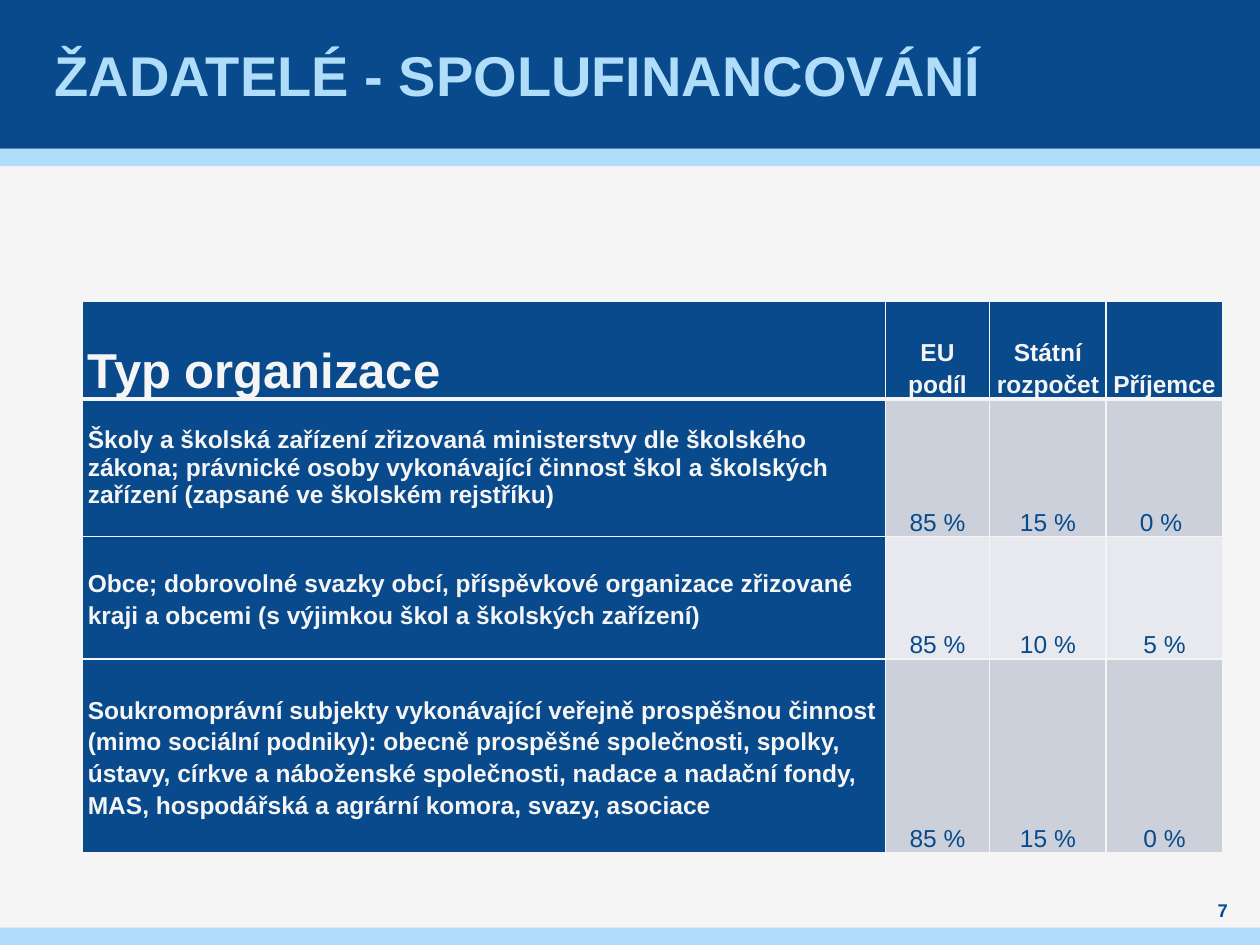
from dataclasses import dataclass

import lxml.etree
import pptx
import pptx.dml.color
import pptx.enum.shapes
import pptx.enum.text
import pptx.oxml.ns
import pptx.util

Cm = pptx.util.Cm
Pt = pptx.util.Pt
Align = pptx.enum.text.PP_ALIGN
Anchor = pptx.enum.text.MSO_ANCHOR

COLORS = {
    "navy": "084A8B",
    "sky": "AFDDFA",
    "paper": "F5F5F5",
    "band_dark": "CCD0DA",
    "band_light": "E7E9EE",
}
FONT = "Arial"
COLUMN_WIDTHS = (16.2, 2.1, 2.35, 2.35)
HEADER_HEIGHT = 1.96
HEADINGS = ("Typ organizace", "EU podíl", "Státní rozpočet ", "Příjemce")


@dataclass(frozen=True)
class Bar:
    top: float
    height: float
    color: str


@dataclass(frozen=True)
class TextStyle:
    size: float
    color: str
    bold: bool = True
    align: Align = Align.LEFT
    anchor: Anchor = Anchor.MIDDLE
    spacing: float = 1.0


@dataclass(frozen=True)
class Applicant:
    name: str
    shares: tuple[str, str, str]
    height: float
    band: str
    spacing: float = 1.15


BARS = (
    Bar(3.0, 0.35, "sky"),
    Bar(0, 3.0, "navy"),
    Bar(18.7, 0.35, "sky"),
)
APPLICANTS = (
    Applicant(
        "Školy a školská zařízení zřizovaná ministerstvy dle školského zákona; "
        "právnické osoby vykonávající činnost škol a školských zařízení "
        "(zapsané ve školském rejstříku)",
        ("85 %", "15 %", "0 % "), 2.78, "band_dark", 1.0,
    ),
    Applicant(
        "Obce; dobrovolné svazky obcí, příspěvkové organizace zřizované kraji "
        "a obcemi (s výjimkou škol a školských zařízení)",
        ("85 %", "10 %", "5 %"), 2.47, "band_light",
    ),
    Applicant(
        "Soukromoprávní subjekty vykonávající veřejně prospěšnou činnost "
        "(mimo sociální podniky): obecně prospěšné společnosti, spolky, ústavy, "
        "církve a náboženské společnosti, nadace a nadační fondy, MAS, "
        "hospodářská a agrární komora, svazy, asociace",
        ("85 %", "15 %", "0 %"), 3.91, "band_dark",
    ),
)

TITLE_STYLE = TextStyle(32, "sky")
NUMBER_STYLE = TextStyle(10.5, "navy", align=Align.CENTER)
MAIN_HEADING = TextStyle(28, "paper", anchor=Anchor.BOTTOM, spacing=1.15)
SHARE_HEADING = TextStyle(14, "paper", True, Align.CENTER, Anchor.BOTTOM, 1.15)
SHARE_STYLE = TextStyle(14, "navy", False, Align.CENTER, Anchor.BOTTOM, 1.15)


def rgb(name: str) -> pptx.dml.color.RGBColor:
    return pptx.dml.color.RGBColor.from_string(COLORS[name])


def write_text(frame, text: str, style: TextStyle) -> None:
    frame.word_wrap = True
    paragraph = frame.paragraphs[0]
    paragraph.alignment = style.align
    paragraph.line_spacing = style.spacing
    run = paragraph.add_run()
    run.text = text
    run.font.name = FONT
    run.font.size = Pt(style.size)
    run.font.bold = style.bold
    run.font.color.rgb = rgb(style.color)


def set_margins(target, side: float) -> None:
    target.margin_left = target.margin_right = Cm(side)
    target.margin_top = target.margin_bottom = 0


def fill_frame(shape, text: str, style: TextStyle, side: float) -> None:
    frame = shape.text_frame
    set_margins(frame, side)
    frame.auto_size = pptx.enum.text.MSO_AUTO_SIZE.NONE
    frame.vertical_anchor = style.anchor
    write_text(frame, text, style)


def add_bar(slide, bar: Bar, width: int) -> None:
    shape = slide.shapes.add_shape(
        pptx.enum.shapes.MSO_SHAPE.RECTANGLE, 0, Cm(bar.top), width, Cm(bar.height)
    )
    shape.shadow.inherit = False
    shape.fill.solid()
    shape.fill.fore_color.rgb = rgb(bar.color)
    shape.line.fill.background()


def add_borders(cell, widths: dict[str, float]) -> None:
    properties = cell._tc.get_or_add_tcPr()
    qn = pptx.oxml.ns.qn
    for index, (side, width) in enumerate(widths.items()):
        line = lxml.etree.Element(qn(f"a:ln{side}"), w=str(Pt(width)))
        fill = lxml.etree.SubElement(line, qn("a:solidFill"))
        lxml.etree.SubElement(fill, qn("a:srgbClr"), val=COLORS["paper"])
        properties.insert(index, line)


def fill_cell(
    cell, text: str, style: TextStyle, fill: str, top: float = 1, bottom: float = 1
) -> None:
    set_margins(cell, 0.12)
    cell.vertical_anchor = style.anchor
    cell.fill.solid()
    cell.fill.fore_color.rgb = rgb(fill)
    write_text(cell.text_frame, text, style)
    add_borders(cell, {"L": 1, "R": 1, "T": top, "B": bottom})


def add_funding_table(slide) -> None:
    heights = [HEADER_HEIGHT] + [applicant.height for applicant in APPLICANTS]
    table = slide.shapes.add_table(
        len(heights), len(COLUMN_WIDTHS), Cm(1.65), Cm(6.08),
        Cm(sum(COLUMN_WIDTHS)), Cm(sum(heights)),
    ).table
    for column, width in zip(table.columns, COLUMN_WIDTHS):
        column.width = Cm(width)
    for row, height in zip(table.rows, heights):
        row.height = Cm(height)
    for index, heading in enumerate(HEADINGS):
        style = SHARE_HEADING if index else MAIN_HEADING
        fill_cell(table.cell(0, index), heading, style, "navy", bottom=3)
    for row, applicant in enumerate(APPLICANTS, start=1):
        top = 3 if row == 1 else 1
        name_style = TextStyle(14, "paper", spacing=applicant.spacing)
        fill_cell(table.cell(row, 0), applicant.name, name_style, "navy", top)
        for column, share in enumerate(applicant.shares, start=1):
            fill_cell(table.cell(row, column), share, SHARE_STYLE, applicant.band, top)


def main() -> None:
    presentation = pptx.Presentation()
    presentation.slide_width = Cm(25.4)
    presentation.slide_height = Cm(19.05)
    slide = presentation.slides.add_slide(presentation.slide_layouts[5])
    slide.background.fill.solid()
    slide.background.fill.fore_color.rgb = rgb("paper")

    for bar in BARS:
        add_bar(slide, bar, presentation.slide_width)

    title = slide.shapes.title
    title.element.getparent().append(title.element)
    title.left, title.top, title.width, title.height = Cm(1), 0, Cm(23.4), Cm(3)
    fill_frame(title, "ŽADATELÉ - SPOLUFINANCOVÁNÍ", TITLE_STYLE, 0.1)

    number = slide.shapes.add_textbox(Cm(24), Cm(18.1), Cm(1.3), Cm(0.5))
    fill_frame(number, "7", NUMBER_STYLE, 0)

    add_funding_table(slide)
    presentation.save("out.pptx")


if __name__ == "__main__":
    main()
